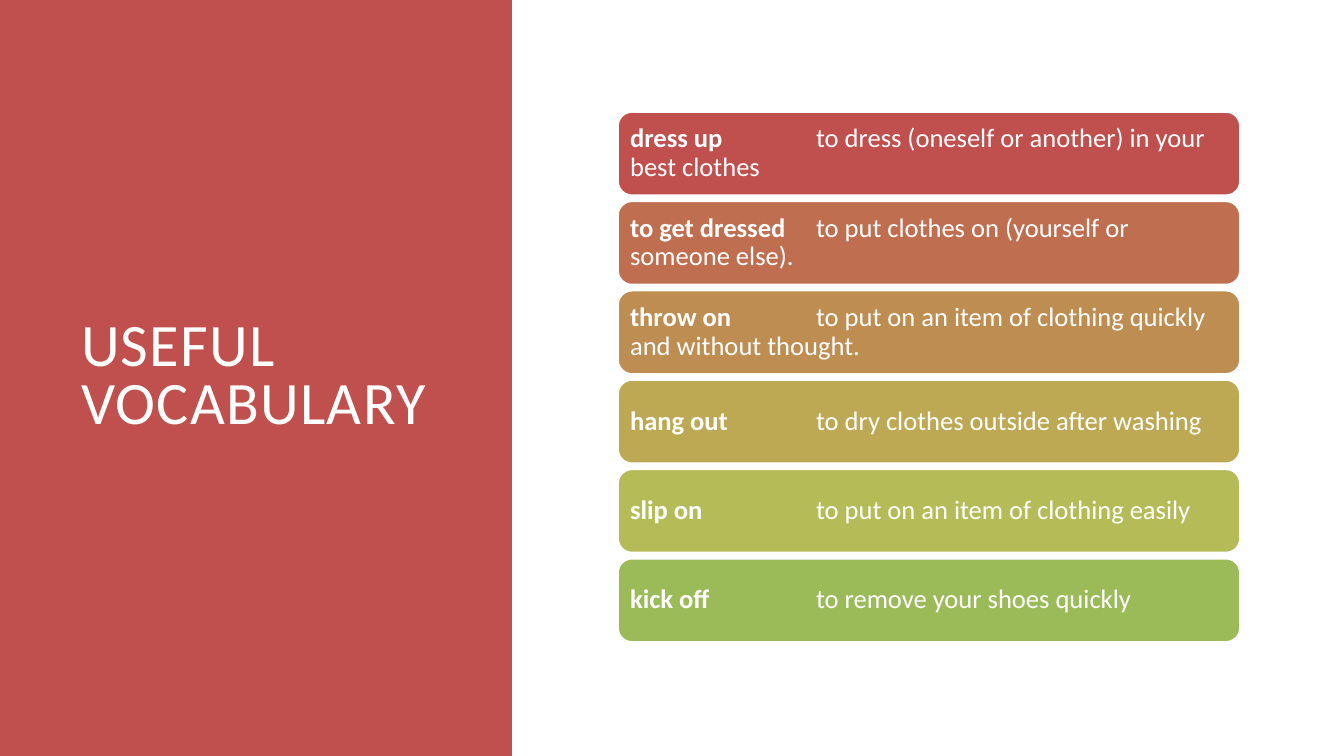
from pptx import Presentation
from pptx.dml.color import RGBColor
from pptx.enum.shapes import MSO_SHAPE
from pptx.enum.text import MSO_ANCHOR, MSO_AUTO_SIZE, PP_ALIGN
from pptx.oxml import parse_xml
from pptx.oxml.ns import nsdecls
from pptx.util import Pt

RECT, ROUND = MSO_SHAPE.RECTANGLE, MSO_SHAPE.ROUNDED_RECTANGLE
MIDDLE, LEFT, FIXED = MSO_ANCHOR.MIDDLE, PP_ALIGN.LEFT, MSO_AUTO_SIZE.NONE
SCALE = 914400 / 100.8
FONT, RED, WHITE = "Calibri", "C0504D", "FFFFFF"
TITLE_ONLY = 5
GAP, PAD, TAB = 6, 8, 186

TERMS = [
    ("dress up", "to dress (oneself or another) in your best clothes", RED),
    ("to get dressed", "to put clothes on (yourself or someone else).", "BF6F4F"),
    ("throw on", "to put on an item of clothing quickly and without thought.", "BE8D52"),
    ("hang out", "to dry clothes outside after washing", "BDA954"),
    ("slip on", "to put on an item of clothing easily", "B5BC57"),
    ("kick off", "to remove your shoes quickly", "9BBB59"),
]


def px(n):
    return round(n * SCALE)


def paint(part, color):
    if hasattr(part, "solid"):
        part.solid()
        part.fore_color.rgb = RGBColor.from_string(color)
    else:
        part.color.rgb = RGBColor.from_string(color)


def add_box(slide, kind, box, color):
    shape = slide.shapes.add_shape(kind, *map(px, box))
    shape.shadow.inherit = False
    paint(shape.fill, color)
    shape.line.fill.background()
    return shape


def style(run, size, bold=False):
    run.font.name = FONT
    run.font.size = Pt(size)
    run.font.bold = bold
    paint(run.font, WHITE)


def set_frame(frame, space):
    frame.word_wrap = True
    frame.auto_size = FIXED
    frame.vertical_anchor = MIDDLE
    para = frame.paragraphs[0]
    para.alignment = LEFT
    para.line_spacing = space
    return para


def add_title(slide, box, text):
    x, y, w, h = box
    add_box(slide, RECT, box, RED)
    title = slide.shapes.title
    slide.shapes._spTree.append(title._element)
    title.left, title.top = px(x + 71), px(y + 71)
    title.width, title.height = px(w - 135), px(h - 142)
    para = set_frame(title.text_frame, 0.8)
    para.text = text
    run = para.runs[0]
    style(run, 43)
    run.font._element.set("spc", "100")


def add_term(slide, box, term, sense, color):
    bar = add_box(slide, ROUND, box, color)
    paint(bar.line, WHITE)
    bar.line.width = Pt(1.25)
    frame = bar.text_frame
    frame.margin_left = frame.margin_right = px(PAD)
    frame.margin_top = frame.margin_bottom = px(PAD)
    para = set_frame(frame, 0.9)
    props = para._p.get_or_add_pPr()
    props.append(parse_xml(
        f'<a:tabLst {nsdecls("a")}><a:tab pos="{px(TAB)}" algn="l"/></a:tabLst>'))
    for text, bold in ((term, True), ("\t" + sense, False)):
        run = para.add_run()
        run.text = text
        style(run, 19, bold)


def add_terms(slide, box, terms):
    x, y, w, h = box
    step = (h + GAP) / len(terms)
    for i, term in enumerate(terms):
        add_term(slide, (x, y + i * step, w, step - GAP), *term)


def main():
    deck = Presentation()
    deck.slide_width, deck.slide_height = px(1344), px(756)
    slide = deck.slides.add_slide(deck.slide_layouts[TITLE_ONLY])
    add_title(slide, (0, 0, 512, 756), "USEFUL VOCABULARY")
    add_terms(slide, (618, 112, 622, 530), TERMS)
    deck.save("out.pptx")


if __name__ == "__main__":
    main()
